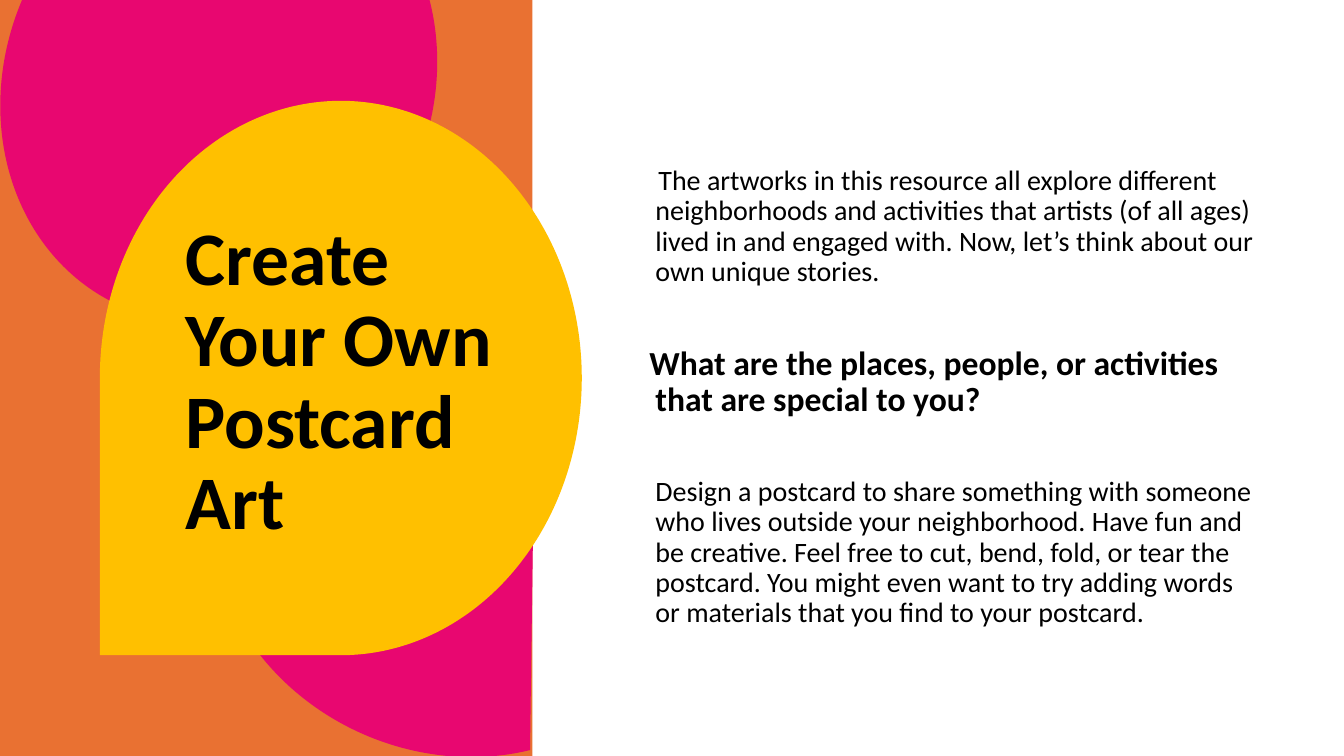
from pptx import Presentation
from pptx import util as u
from pptx.dml.color import RGBColor
from pptx.enum import shapes, text
from pptx.oxml.ns import qn
from lxml import etree

ORANGE = RGBColor(0xE9, 0x71, 0x32)
PINK = RGBColor(0xE8, 0x07, 0x70)
YELLOW = RGBColor(0xFF, 0xC0, 0x00)
BLACK = RGBColor(0, 0, 0)
FONT = "Calibri"
LINE_SPACING = 0.9

TITLE_LINES = ["Create", "Your Own", "Postcard", "Art"]
# Wording, size, bold, first-line indent, space before
BODY_PARAS = [
    ("The artworks in this resource all explore different neighborhoods and "
     "activities that artists (of all ages) lived in and engaged with. Now, "
     "let’s think about our own unique stories.", 20, False, 0.03, 0),
    ("What are the places, people, or activities that are special to you?",
     24, True, -0.06, 42),
    ("Design a postcard to share something with someone who lives outside "
     "your neighborhood. Have fun and be creative. Feel free to cut, bend, "
     "fold, or tear the postcard. You might even want to try adding words or "
     "materials that you find to your postcard.", 20, False, 0, 42),
]


def place(item, left, top, width, height):
    item.left, item.top = u.Inches(left), u.Inches(top)
    item.width, item.height = u.Inches(width), u.Inches(height)


def add_span(para, words, size, bold):
    span = para.add_run()
    span.text = words
    span.font.name = FONT
    span.font.size = u.Pt(size)
    span.font.bold = bold
    span.font.color.rgb = BLACK


def prepare_frame(holder, anchor):
    frame = holder.text_frame
    frame.word_wrap = True
    frame.auto_size = text.MSO_AUTO_SIZE.NONE
    frame.vertical_anchor = anchor
    return frame


def add_plain_shape(page, kind, box, color, rotation=0):
    shape = page.shapes.add_shape(kind, *(u.Inches(v) for v in box))
    shape.rotation = rotation
    shape.shadow.inherit = False
    shape.fill.solid()
    shape.fill.fore_color.rgb = color
    shape.line.fill.background()


def draw_artwork(page, left, top, width, height):
    kinds = shapes.MSO_SHAPE
    # Orange panel
    add_plain_shape(page, kinds.RECTANGLE, (left, top, width, height), ORANGE)
    # Pink chords, cut by the top and right edges of the panel
    for dx, dy, rotation in [(-0.21, -1.29, 293), (2.07, 3.22, 24)]:
        add_plain_shape(page, kinds.CHORD, (left + dx, top + dy, 4.82, 4.24),
                        PINK, rotation)
    # Yellow drop behind the title
    add_plain_shape(page, kinds.TEAR, (left + 1.02, top + 1, 4.78, 5.5),
                    YELLOW, 180)


def write_title(holder, left, top, width, height):
    place(holder, left, top, width, height)
    frame = prepare_frame(holder, text.MSO_ANCHOR.MIDDLE)
    frame.margin_bottom = u.Inches(0.72)
    para = frame.paragraphs[0]
    para.alignment = text.PP_ALIGN.LEFT
    para.line_spacing = LINE_SPACING
    for number, words in enumerate(TITLE_LINES):
        if number:
            para.add_line_break()
        add_span(para, words, 54, True)


def write_body(holder, left, top, width, height):
    place(holder, left, top, width, height)
    frame = prepare_frame(holder, text.MSO_ANCHOR.TOP)
    frame.margin_top = u.Inches(0.48)
    for number, (words, size, bold, indent, before) in enumerate(BODY_PARAS):
        para = frame.add_paragraph() if number else frame.paragraphs[0]
        para.alignment = text.PP_ALIGN.LEFT
        para.line_spacing = LINE_SPACING
        para.space_before = u.Pt(before)
        add_span(para, words, size, bold)
        # Indent, and no bullet
        props = para._p.get_or_add_pPr()
        props.set("marL", str(u.Inches(0.25)))
        props.set("indent", str(u.Inches(indent)))
        etree.SubElement(props, qn("a:buNone"))


def main():
    deck = Presentation()
    deck.slide_width, deck.slide_height = u.Inches(13.33), u.Inches(7.5)
    page = deck.slides.add_slide(deck.slide_layouts[1])
    title, body = page.shapes.title, page.placeholders[1]
    draw_artwork(page, -0.03, 0, 5.31, 7.53)
    # Bring the text in front of the artwork
    for holder in (title, body):
        page.shapes._spTree.append(holder._element)
    write_title(title, 1.74, 2.09, 4.77, 4.09)
    write_body(body, 6.15, 1.17, 6.48, 5.74)
    deck.save("out.pptx")


if __name__ == "__main__":
    main()
